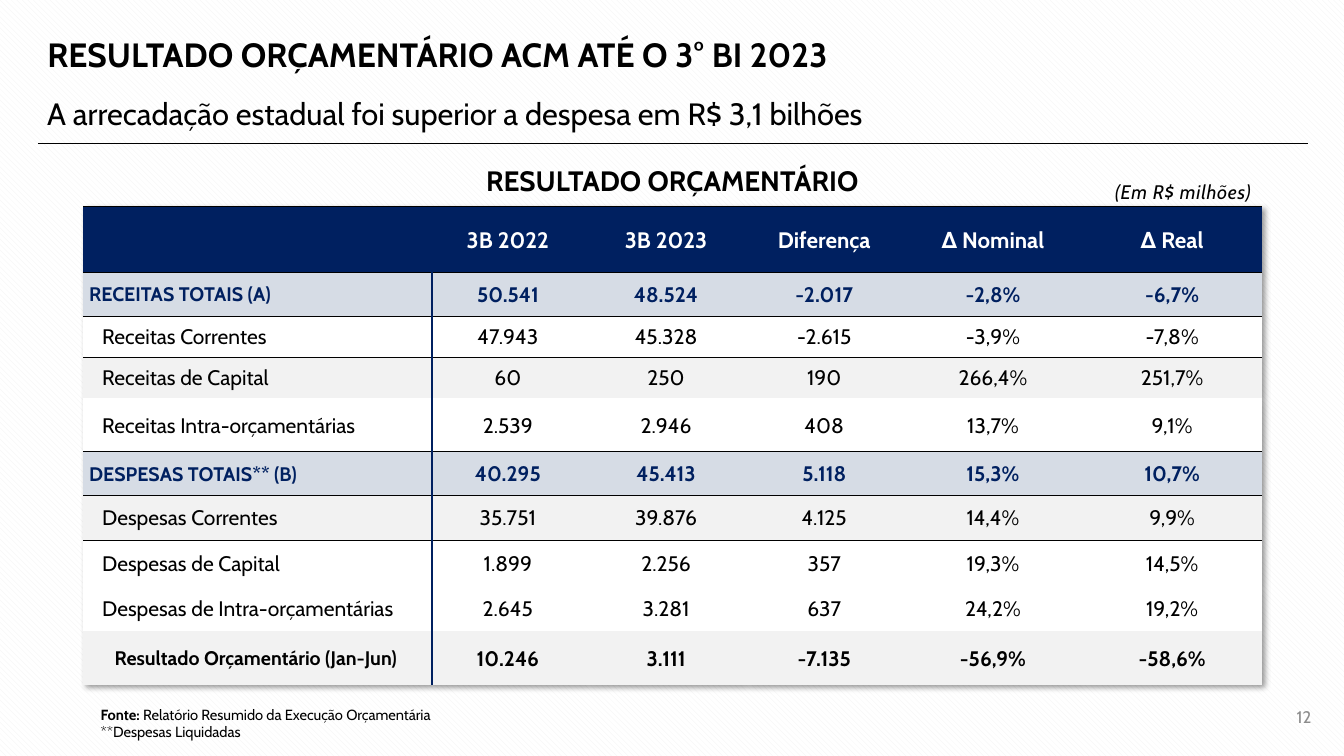
from dataclasses import dataclass

import lxml.etree
import pptx
import pptx.dml.color
import pptx.enum.dml
import pptx.enum.shapes
import pptx.enum.text
import pptx.oxml
import pptx.oxml.ns
import pptx.util

Pt = pptx.util.Pt
ALIGN = pptx.enum.text.PP_ALIGN
ANCHOR = pptx.enum.text.MSO_ANCHOR
FONT = "Cabin"
NO_STYLE = "{2D5ABB26-0587-4C30-8999-92F81FD0307C}"
COLORS = {
    "black": "000000",
    "white": "FFFFFF",
    "navy": "002060",
    "total": "D6DCE5",
    "band": "F2F2F2",
    "number": "8C8C8C",
}


@dataclass
class Label:
    text: str
    left: float
    top: float
    width: float
    height: float
    size: float
    color: str = "black"
    bold: bool = False
    italic: bool = False
    align: ALIGN = ALIGN.LEFT
    anchor: ANCHOR = ANCHOR.TOP
    line_spacing: float = 1.0


@dataclass
class RowStyle:
    fill: str
    color: str = "black"
    bold: bool = False
    label_size: float = 15
    value_size: float = 15
    label_indent: float = 13.7
    label_align: ALIGN = ALIGN.LEFT


@dataclass
class Row:
    style: RowStyle
    height: float
    texts: list[str]


@dataclass
class Rule:
    x1: float
    y1: float
    x2: float
    y2: float
    color: str
    width: float


HEADER = RowStyle("navy", "white", True, 16, 16)
TOTAL = RowStyle("total", "navy", True, label_size=14, label_indent=4.3)
PLAIN = RowStyle("white")
BAND = RowStyle("band")
RESULT = RowStyle("band", bold=True, label_size=14, label_indent=0.72, label_align=ALIGN.CENTER)

TITLE = Label("RESULTADO ORÇAMENTÁRIO ACM ATÉ O 3° BI 2023", 26.6, 12.2, 734.4, 56.9, 24,
              bold=True, anchor=ANCHOR.MIDDLE, line_spacing=0.9)
PAGE_NUMBER = Label("12", 874.8, 497.5, 69.1, 28.8, 12, "number",
                    align=ALIGN.RIGHT, anchor=ANCHOR.MIDDLE)
SUBTITLE = Label("A arrecadação estadual foi superior a despesa em R$ 3,1 bilhões",
                 26.6, 56.9, 907.2, 42.5, 22, anchor=ANCHOR.MIDDLE, line_spacing=1.2)
TABLE_TITLE = Label("RESULTADO ORÇAMENTÁRIO", 46.1, 113, 868.3, 31.7, 20,
                    bold=True, align=ALIGN.CENTER)
UNIT = Label("(Em R$ milhões)", 750.2, 121.7, 150.5, 30.2, 14,
             italic=True, align=ALIGN.RIGHT, line_spacing=1.2)
SOURCE = Label("Relatório Resumido da Execução Orçamentária\n**Despesas Liquidadas",
               64.8, 500.4, 341.3, 32.4, 10.5)

TABLE_LEFT, TABLE_TOP = 59.3, 147.6
COLUMN_WIDTHS = [247, 113, 113, 113, 128, 128]
RULED_EDGES = {0, 1, 2, 5, 6}
ROWS = [
    Row(HEADER, 47.1, ["", "3B 2022", "3B 2023", "Diferença", "∆ Nominal", "∆ Real"]),
    Row(TOTAL, 31, ["RECEITAS TOTAIS (A)", "50.541", "48.524", "-2.017", "-2,8%", "-6,7%"]),
    Row(PLAIN, 29.5, ["Receitas Correntes", "47.943", "45.328", "-2.615", "-3,9%", "-7,8%"]),
    Row(BAND, 29.5, ["Receitas de Capital", "60", "250", "190", "266,4%", "251,7%"]),
    Row(PLAIN, 38.1, ["Receitas Intra-orçamentárias", "2.539", "2.946", "408", "13,7%", "9,1%"]),
    Row(TOTAL, 31, ["DESPESAS TOTAIS** (B)", "40.295", "45.413", "5.118", "15,3%", "10,7%"]),
    Row(BAND, 32.4, ["Despesas Correntes", "35.751", "39.876", "4.125", "14,4%", "9,9%"]),
    Row(PLAIN, 32.4, ["Despesas de Capital", "1.899", "2.256", "357", "19,3%", "14,5%"]),
    Row(PLAIN, 32.4, ["Despesas de Intra-orçamentárias", "2.645", "3.281", "637", "24,2%", "19,2%"]),
    Row(RESULT, 38.4, ["Resultado Orçamentário (Jan-Jun)", "10.246", "3.111", "-7.135", "-56,9%", "-58,6%"]),
]
RULES = [
    Rule(27.4, 102.2, 934.6, 102.2, "black", 0.5),
    Rule(308.9, 179.3, 308.9, 489.6, "navy", 1.5),
]


def rgb(name: str) -> pptx.dml.color.RGBColor:
    return pptx.dml.color.RGBColor.from_string(COLORS[name])


def format_font(font, size: float, color: str, bold: bool, italic: bool = False) -> None:
    font.name, font.size = FONT, Pt(size)
    font.bold, font.italic = bold, italic
    font.color.rgb = rgb(color)


def fill_label(sp, label: Label) -> None:
    sp.left, sp.top = Pt(label.left), Pt(label.top)
    sp.width, sp.height = Pt(label.width), Pt(label.height)
    tf = sp.text_frame
    tf.text = label.text
    tf.word_wrap = True
    tf.auto_size = pptx.enum.text.MSO_AUTO_SIZE.NONE
    tf.vertical_anchor = label.anchor
    for p in tf.paragraphs:
        p.alignment, p.line_spacing = label.align, label.line_spacing
        for r in p.runs:
            format_font(r.font, label.size, label.color, label.bold, label.italic)


def add_label(s, label: Label):
    sp = s.shapes.add_textbox(0, 0, 0, 0)
    fill_label(sp, label)
    return sp


def add_rule(s, rule: Rule) -> None:
    line = s.shapes.add_connector(pptx.enum.shapes.MSO_CONNECTOR.STRAIGHT,
                                  Pt(rule.x1), Pt(rule.y1), Pt(rule.x2), Pt(rule.y2))
    line.line.color.rgb = rgb(rule.color)
    line.line.width = Pt(rule.width)
    lxml.etree.SubElement(line._element.spPr, pptx.oxml.ns.qn("a:effectLst"))


def add_border(cell, side: str) -> None:
    cell._tc.get_or_add_tcPr().append(pptx.oxml.parse_xml(
        f'<a:{side} {pptx.oxml.ns.nsdecls("a")} w="{Pt(0.5)}"><a:solidFill>'
        f'<a:srgbClr val="{COLORS["black"]}"/></a:solidFill></a:{side}>'))


def fill_cell(cell, text: str, style: RowStyle, is_label: bool) -> None:
    cell.text = text
    cell.vertical_anchor = ANCHOR.MIDDLE
    cell.margin_left = Pt(style.label_indent if is_label else 0.72)
    cell.margin_top = cell.margin_right = Pt(0.72)
    cell.margin_bottom = 0
    cell.fill.solid()
    cell.fill.fore_color.rgb = rgb(style.fill)
    p = cell.text_frame.paragraphs[0]
    p.alignment = style.label_align if is_label else ALIGN.CENTER
    size = style.label_size if is_label else style.value_size
    format_font(p.font, size, style.color, style.bold)
    for r in p.runs:
        format_font(r.font, size, style.color, style.bold)


def add_budget_table(s) -> None:
    table = s.shapes.add_table(len(ROWS), len(COLUMN_WIDTHS), Pt(TABLE_LEFT), Pt(TABLE_TOP),
                               Pt(sum(COLUMN_WIDTHS)), Pt(sum(row.height for row in ROWS))).table
    props = table._tbl.tblPr
    props.find(pptx.oxml.ns.qn("a:tableStyleId")).text = NO_STYLE
    props.insert(0, pptx.oxml.parse_xml(
        f'<a:effectLst {pptx.oxml.ns.nsdecls("a")}><a:outerShdw blurRad="{Pt(4)}" dist="{Pt(3)}" '
        f'dir="2700000" algn="tl" rotWithShape="0"><a:srgbClr val="{COLORS["black"]}">'
        '<a:alpha val="40000"/></a:srgbClr></a:outerShdw></a:effectLst>'))
    for column, width in zip(table.columns, COLUMN_WIDTHS):
        column.width = Pt(width)
    for i, row in enumerate(ROWS):
        table.rows[i].height = Pt(row.height)
        for j, text in enumerate(row.texts):
            cell = table.cell(i, j)
            for side, edge in (("lnT", i), ("lnB", i + 1)):
                if edge in RULED_EDGES:
                    add_border(cell, side)
            fill_cell(cell, text, row.style, j == 0)


def main() -> None:
    prs = pptx.Presentation()
    prs.slide_width, prs.slide_height = Pt(960), Pt(540)
    s = prs.slides.add_slide(prs.slide_layouts[5])
    fill = s.background.fill
    fill.patterned()
    fill.pattern = pptx.enum.dml.MSO_PATTERN.WIDE_DOWNWARD_DIAGONAL
    fill.fore_color.rgb, fill.back_color.rgb = rgb("band"), rgb("white")

    fill_label(s.shapes.title, TITLE)
    for label in (PAGE_NUMBER, SUBTITLE, TABLE_TITLE):
        add_label(s, label)
    unit = add_label(s, UNIT)
    unit.text_frame.paragraphs[0].runs[0].font._element.set("spc", "50")
    p = add_label(s, SOURCE).text_frame.paragraphs[0]
    r = p.add_run()
    r.text = "Fonte: "
    format_font(r.font, SOURCE.size, SOURCE.color, True)
    p.runs[0]._r.addprevious(r._r)
    add_budget_table(s)
    for rule in RULES:
        add_rule(s, rule)
    prs.save("out.pptx")


if __name__ == "__main__":
    main()
